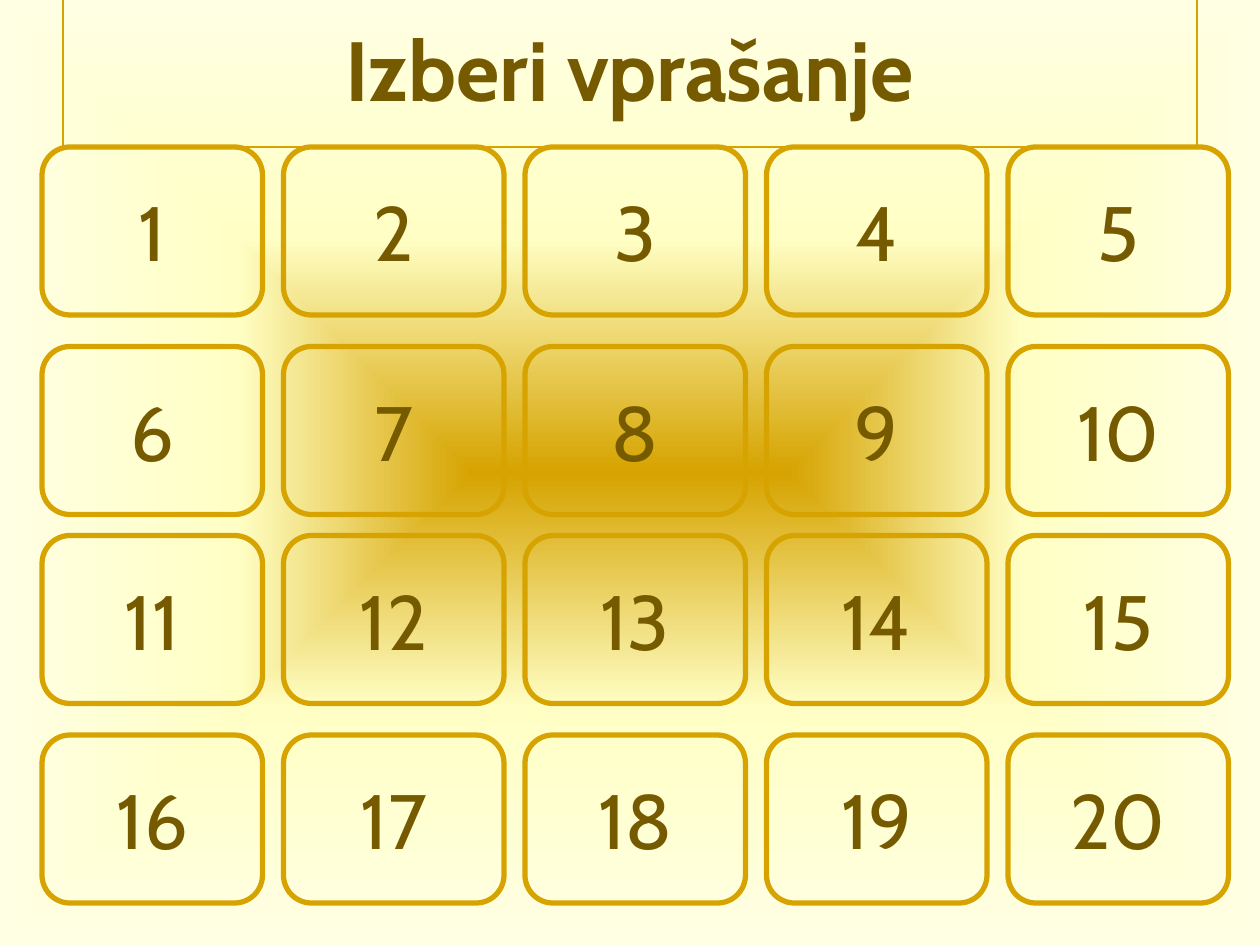
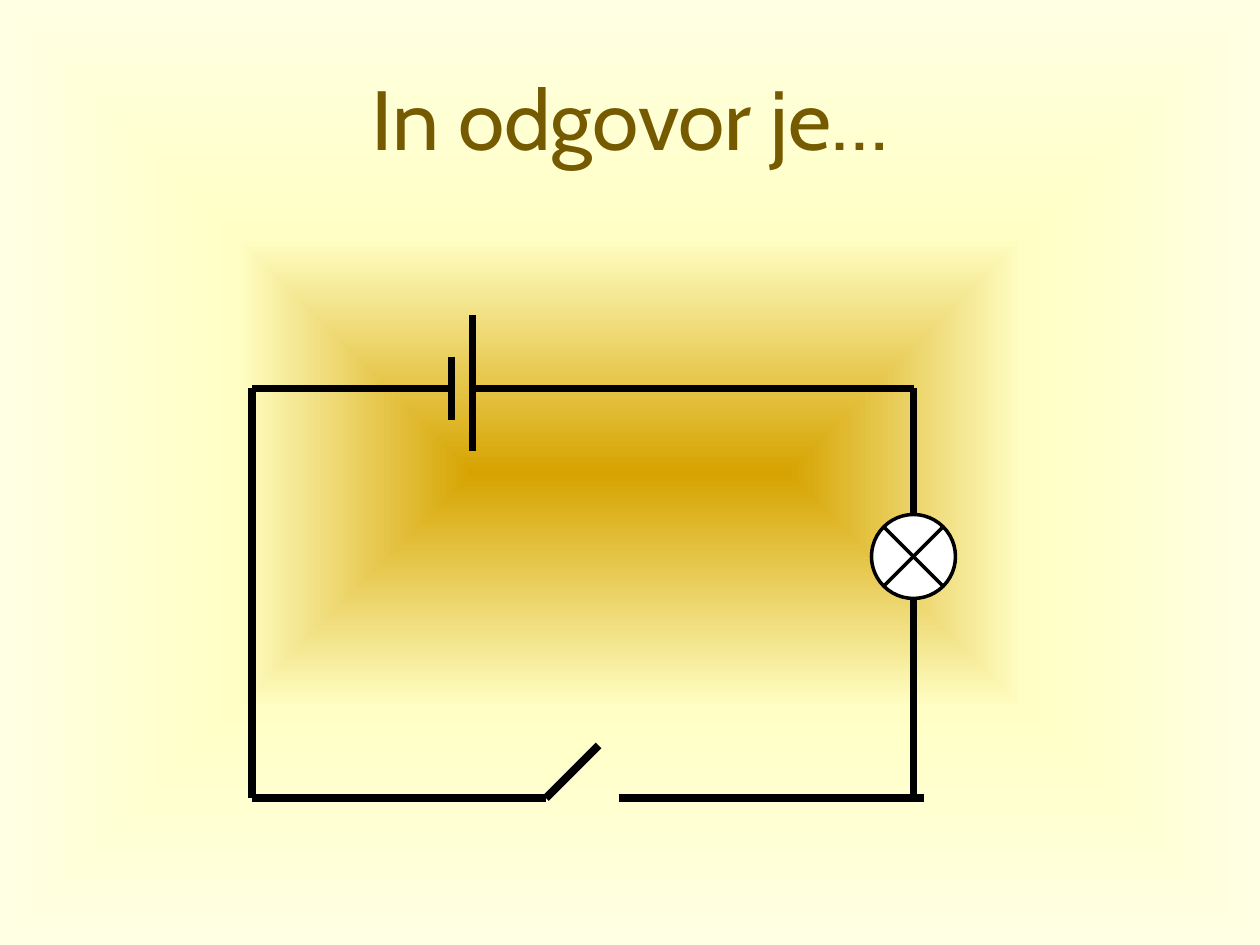
from lxml import etree
from pptx import Presentation
from pptx.dml.color import RGBColor
from pptx.enum import shapes, text
from pptx.oxml import parse_xml
from pptx.oxml.ns import nsdecls, qn
from pptx.util import Pt

# Content
PICK = "Izberi vprašanje"
ANSWER = "In odgovor je…"
ROW_TOPS = [84, 198, 306, 420]
COLS = 5

# Circuit, as (x1, y1, x2, y2)
LEFT, RIGHT, TOP, BASE = 144, 522, 222, 456
LAMP = (498, 294, 48, 48)
WIRES = [
    (LEFT, TOP, LEFT, BASE),
    (RIGHT, BASE, RIGHT, 342),
    (LEFT, TOP, 258, TOP),
    (258, 204, 258, 240),      # short battery plate
    (270, 180, 270, 258),      # long battery plate
    (270, TOP, RIGHT, TOP),
    (RIGHT, TOP, RIGHT, 294),
    (LEFT, BASE, 312, BASE),
    (312, BASE, 342, 426),     # open switch
    (354, BASE, 528, BASE),
]

# Shared style
GOLD = RGBColor(0xD6, 0xA3, 0x00)
CREAM = RGBColor(0xFF, 0xFF, 0xC5)
PALE = RGBColor(0xFF, 0xFF, 0xE3)
BROWN = RGBColor(0x76, 0x5A, 0x00)
BLACK = RGBColor(0, 0, 0)
WHITE = RGBColor(255, 255, 255)
FONT = "Cabin"
STOPS = [(0, GOLD), (50, CREAM), (100, PALE)]


def pts(*nums):
    return [Pt(n) for n in nums]


def glow(master):
    """Give the master a gradient that spreads from the centre."""
    master.background.fill.gradient()
    grad = master.element.xpath(".//p:bgPr/a:gradFill")[0]
    for child in list(grad):
        grad.remove(child)
    marks = "".join(
        f'<a:gs pos="{pos * 1000}"><a:srgbClr val="{tone}"/></a:gs>'
        for pos, tone in STOPS)
    grad.append(parse_xml(f'<a:gsLst {nsdecls("a")}>{marks}</a:gsLst>'))
    grad.append(parse_xml(
        f'<a:path {nsdecls("a")} path="shape">'
        '<a:fillToRect l="50000" t="50000" r="50000" b="50000"/></a:path>'))


def outline(shape, color, width):
    shape.line.color.rgb = color
    shape.line.width = Pt(width)


def write(shape, words, size, bold=False):
    frame = shape.text_frame
    frame.text = words
    frame.auto_size = text.MSO_AUTO_SIZE.NONE
    frame.vertical_anchor = text.MSO_ANCHOR.MIDDLE
    para = frame.paragraphs[0]
    para.alignment = text.PP_ALIGN.CENTER
    font = para.runs[0].font
    font.name, font.size, font.bold = FONT, Pt(size), bold
    font.color.rgb = BROWN


def add_slide(prs, words, top, bold=False):
    slide = prs.slides.add_slide(prs.slide_layouts[5])
    title = slide.shapes.title
    title.left, title.top, title.width, title.height = pts(36, top, 648, 90)
    write(title, words, 48, bold)
    return slide


def add_card(slide, label, left, top):
    card = slide.shapes.add_shape(
        shapes.MSO_SHAPE.ROUNDED_RECTANGLE, *pts(left, top, 126, 96))
    card.shadow.inherit = False
    card.fill.background()
    outline(card, GOLD, 3)
    write(card, label, 44)
    card.text_frame.word_wrap = False


def add_wire(slide, ends):
    wire = slide.shapes.add_connector(
        shapes.MSO_CONNECTOR.STRAIGHT, *pts(*ends))
    outline(wire, BLACK, 4.5)
    etree.SubElement(wire._element.spPr, qn("a:effectLst"))


def main():
    prs = Presentation()
    prs.slide_width, prs.slide_height = pts(720, 540)
    glow(prs.slide_master)

    # Question board
    board = add_slide(prs, PICK, -6, bold=True)
    outline(board.shapes.title, GOLD, 0.75)
    for row, top in enumerate(ROW_TOPS):
        for col in range(COLS):
            add_card(board, str(row * COLS + col + 1), 24 + 138 * col, top)

    # Circuit answer
    reply = add_slide(prs, ANSWER, 21.6)
    lamp = reply.shapes.add_shape(
        shapes.MSO_SHAPE.FLOWCHART_SUMMING_JUNCTION, *pts(*LAMP))
    lamp.shadow.inherit = False
    lamp.fill.solid()
    lamp.fill.fore_color.rgb = WHITE
    outline(lamp, BLACK, 2)
    for ends in WIRES:
        add_wire(reply, ends)

    prs.save("out.pptx")


if __name__ == "__main__":
    main()
